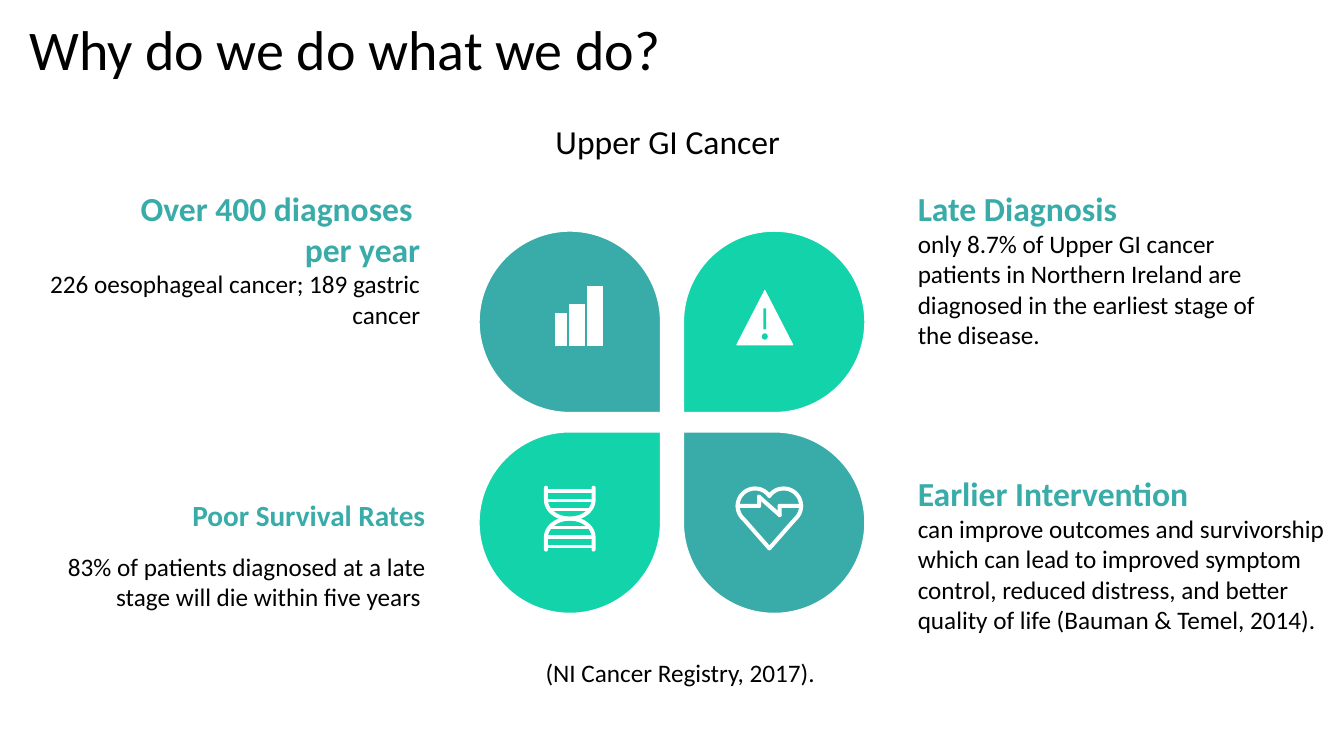
"""Build the slide on why upper GI cancer care matters."""
from itertools import pairwise
from math import atan2, cos, degrees, radians, sin

from lxml.etree import SubElement
from pptx import Presentation
from pptx.dml.color import RGBColor
from pptx.enum.shapes import MSO_CONNECTOR, MSO_SHAPE
from pptx.enum.text import MSO_ANCHOR, PP_ALIGN
from pptx.oxml.ns import qn
from pptx.util import Cm, Pt

COLOURS = {"teal": "39ACA9", "mint": "13D3AA", "white": "FFFFFF", "black": "000000"}
FONT = "Calibri"
LEFT, RIGHT = PP_ALIGN.LEFT, PP_ALIGN.RIGHT

PETAL_SIZE = 4.7
PETALS = [
    (12.01, 5.76, 90, "teal"),
    (17.16, 5.76, 180, "mint"),
    (12.01, 10.82, 0, "mint"),
    (17.16, 10.82, 270, "teal"),
]

MESSAGES = [
    ((0.53, 4.73, 10.06, 3.58), RIGHT, ["Over 400 diagnoses ", "per year"],
     "226 oesophageal cancer; 189 gastric cancer"),
    ((23.13, 4.72, 9.35, 4.11), LEFT, ["Late Diagnosis"],
     "only 8.7% of Upper GI cancer patients in Northern Ireland are diagnosed "
     "in the earliest stage of the disease."),
    ((23.13, 11.9, 10.26, 4.11), LEFT, ["Earlier Intervention"],
     "can improve outcomes and survivorship which can lead to improved symptom "
     "control, reduced distress, and better quality of life (Bauman & Temel, 2014)."),
]


def colour(name):
    return RGBColor.from_string(COLOURS[name])


def format_paragraph(paragraph, size, colour_name="black", bold=False, alignment=LEFT):
    paragraph.alignment = alignment
    for run in paragraph.runs:
        run.font.name = FONT
        run.font.size = Pt(size)
        run.font.bold = bold
        run.font.color.rgb = colour(colour_name)


def prepare_frame(shape):
    frame = shape.text_frame
    frame.word_wrap = True
    frame.vertical_anchor = MSO_ANCHOR.MIDDLE
    frame.margin_left = frame.margin_right = frame.margin_top = frame.margin_bottom = 0
    return frame


def add_title(slide, text):
    title = slide.shapes.title
    title.left, title.top, title.width, title.height = Cm(0.74), Cm(0.55), Cm(23.88), Cm(1.55)
    frame = prepare_frame(title)
    frame.text = text
    frame.paragraphs[0].line_spacing = 0.9
    format_paragraph(frame.paragraphs[0], 40)


def add_text(slide, box, lines):
    """Add a text box whose lines are (text, size, colour, bold, alignment)."""
    shape = slide.shapes.add_textbox(*map(Cm, box))
    frame = prepare_frame(shape)
    frame.text = "\n".join(line[0] for line in lines)
    for paragraph, line in zip(frame.paragraphs, lines):
        format_paragraph(paragraph, *line[1:])
    return shape


def add_message(slide, box, alignment, headings, body, heading_size=24):
    lines = [(heading, heading_size, "teal", True, alignment) for heading in headings]
    return add_text(slide, box, lines + [(body, 18, "black", False, alignment)])


def add_survival_message(slide):
    shape = add_message(slide, (0.43, 12.61, 10.29, 2.57), RIGHT, ["Poor Survival Rates"],
                        "83% of patients diagnosed at a late stage will die within five years", 36)
    next(shape.element.iter(qn("a:rPr"))).set("baseline", "30000")
    space = shape.text_frame.paragraphs[1].add_run()
    space.text = " "
    space.font.name = FONT
    space.font.size = Pt(14)


def add_filled(slide, kind, box, fill, line_width=0.0):
    shape = slide.shapes.add_shape(kind, *map(Cm, box))
    shape.shadow.inherit = False
    shape.fill.solid()
    shape.fill.fore_color.rgb = colour(fill)
    if line_width:
        shape.line.color.rgb = colour("white")
        shape.line.width = Pt(line_width)
    else:
        shape.line.fill.background()
    return shape


def add_outline(slide, points, closed):
    """Build a freeform through points given in centimetres."""
    start, *rest = [(Cm(x), Cm(y)) for x, y in points]
    builder = slide.shapes.build_freeform(*start)
    builder.add_line_segments(rest, close=closed)
    shape = builder.convert_to_shape()
    shape.shadow.inherit = False
    return shape


def add_stroke(slide, points, closed=False):
    shape = add_outline(slide, points, closed)
    shape.fill.background()
    shape.line.color.rgb = colour("white")
    shape.line.width = Pt(2.9)
    line = shape.element.spPr.find(qn("a:ln"))
    line.set("cap", "rnd")
    SubElement(line, qn("a:round"))


def add_capsule(slide, start, end, radius=0.05):
    """Add a white bar with round ends between two points."""
    angle = degrees(atan2(end[1] - start[1], end[0] - start[0]))
    points = [*arc(*end, radius, radius, angle - 90, angle + 90, 8),
              *arc(*start, radius, radius, angle + 90, angle + 270, 8)]
    shape = add_outline(slide, points, True)
    shape.fill.solid()
    shape.fill.fore_color.rgb = colour("white")
    shape.line.fill.background()


def add_rung(slide, left, right, y):
    connector = slide.shapes.add_connector(
        MSO_CONNECTOR.STRAIGHT, Cm(left), Cm(y), Cm(right), Cm(y))
    connector.line.color.rgb = colour("white")
    connector.line.width = Pt(2.4)
    SubElement(connector.element.spPr, qn("a:effectLst"))


def arc(centre_x, centre_y, radius_x, radius_y, first, last, steps=24):
    angles = [radians(first + (last - first) * step / steps) for step in range(steps + 1)]
    return [(centre_x + radius_x * cos(angle), centre_y + radius_y * sin(angle))
            for angle in angles]


def add_bars_icon(slide):
    bottom = 8.71
    for left, width, height in [(14.0, 0.28, 0.81), (14.35, 0.38, 1.04), (14.81, 0.38, 1.5)]:
        add_filled(slide, MSO_SHAPE.RECTANGLE, (left, bottom - height, width, height),
                   "white", 0.75)


def add_warning_icon(slide):
    triangle = add_filled(slide, MSO_SHAPE.ISOSCELES_TRIANGLE, (18.57, 7.32, 1.41, 1.37),
                          "white", 0.75)
    SubElement(triangle.element.spPr.find(qn("a:ln")), qn("a:round"))
    add_filled(slide, MSO_SHAPE.ROUNDED_RECTANGLE, (19.24, 7.77, 0.07, 0.53), "mint")
    add_filled(slide, MSO_SHAPE.OVAL, (19.2, 8.4, 0.15, 0.16), "mint")


def add_dna_icon(slide):
    centre_x, centre_y, half_width = 14.36, 13.07, 0.6
    for side in (-1, 1):
        curve = arc(centre_x, centre_y + side * 0.47, half_width, side * 0.47, 180, 360)
        end_y = centre_y + side * 0.78
        add_stroke(slide, [(centre_x - half_width, end_y), *curve,
                           (centre_x + half_width, end_y)])
        for offset, half_rung in [(0.23, 0.48), (0.46, 0.58), (0.7, 0.58)]:
            add_rung(slide, centre_x - half_rung, centre_x + half_rung,
                     centre_y + side * offset)


def add_heart_icon(slide):
    centre_x, centre_y, radius, tip_y = 19.39, 12.75, 0.44, 13.82
    left_lobe = arc(centre_x - 0.36, centre_y, radius, radius, -34, -230)
    right_lobe = [(2 * centre_x - x, y) for x, y in reversed(left_lobe)]
    add_stroke(slide, [*left_lobe, (centre_x, tip_y), *right_lobe], closed=True)
    pulse = [(-0.8, 0), (-0.26, 0), (-0.26, -0.23), (0.26, 0.23), (0.26, 0), (0.8, 0)]
    for start, end in pairwise((centre_x + x, centre_y + y) for x, y in pulse):
        add_capsule(slide, start, end)


def main():
    presentation = Presentation()
    presentation.slide_width, presentation.slide_height = Cm(33.87), Cm(19.05)
    slide = presentation.slides.add_slide(presentation.slide_layouts[5])

    add_title(slide, "Why do we do what we do?")
    add_text(slide, (14.0, 3.05, 9.35, 1.02), [("Upper GI Cancer", 24)])
    for message in MESSAGES:
        add_message(slide, *message)
    add_survival_message(slide)
    for left, top, rotation, fill in PETALS:
        petal = add_filled(slide, MSO_SHAPE.TEAR, (left, top, PETAL_SIZE, PETAL_SIZE), fill, 4.5)
        petal.rotation = rotation
    for add_icon in (add_bars_icon, add_warning_icon, add_dna_icon, add_heart_icon):
        add_icon(slide)
    add_text(slide, (13.75, 16.56, 6.81, 0.76), [("(NI Cancer Registry, 2017).", 18)])

    presentation.save("out.pptx")


if __name__ == "__main__":
    main()
